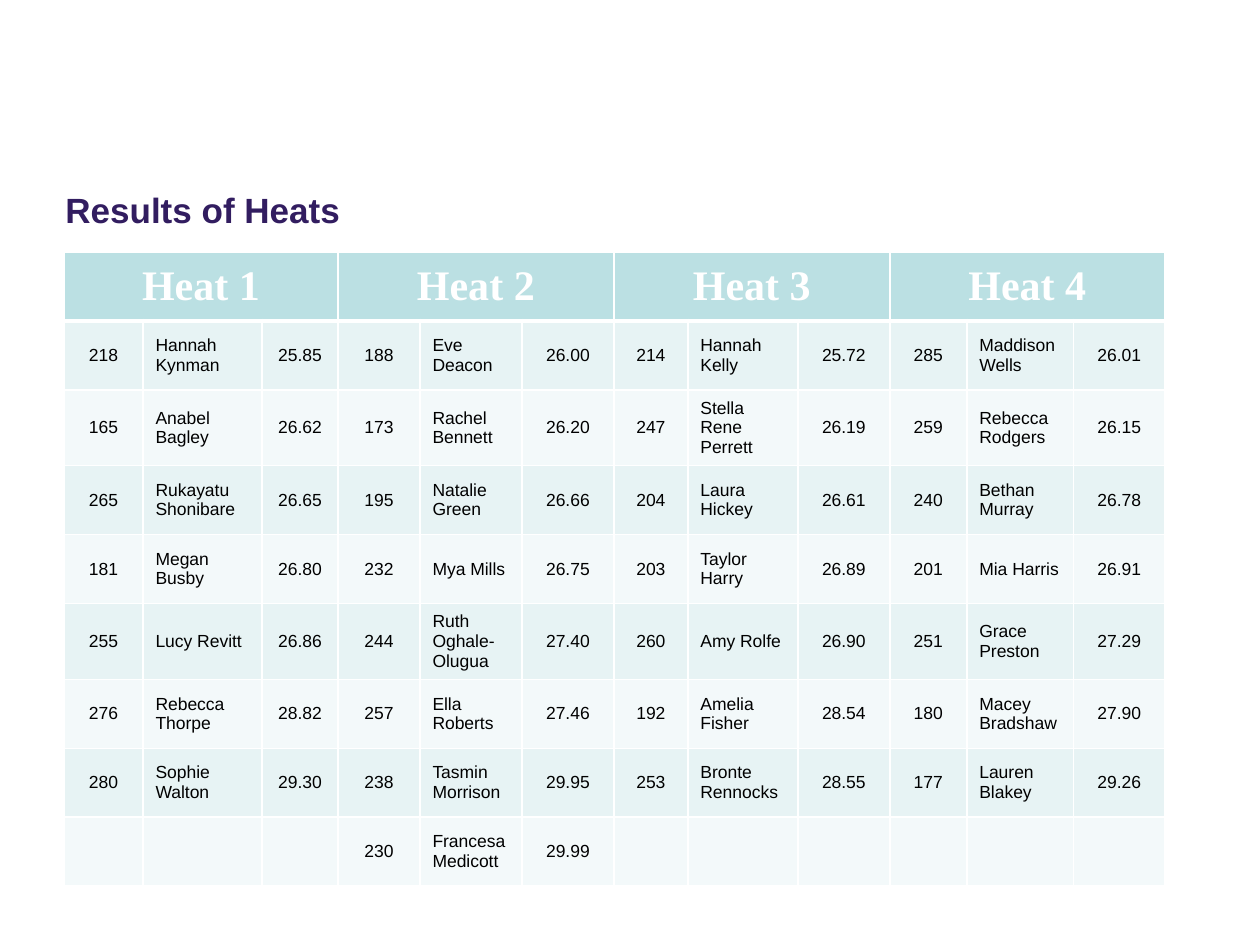
from lxml import etree
from pptx import Presentation
from pptx import util as u
from pptx.dml.color import RGBColor
from pptx.enum import text
from pptx.oxml import ns

COLORS = {
    "title": "321D60",
    "header": "BBE0E3",
    "odd": "E7F3F4",
    "even": "F3F9FA",
    "ink": "000000",
    "white": "FFFFFF",
}
HEATS = {
    "Heat 1": [
        ("218", "Hannah Kynman", "25.85"),
        ("165", "Anabel Bagley", "26.62"),
        ("265", "Rukayatu Shonibare", "26.65"),
        ("181", "Megan Busby", "26.80"),
        ("255", "Lucy Revitt", "26.86"),
        ("276", "Rebecca Thorpe", "28.82"),
        ("280", "Sophie Walton", "29.30"),
    ],
    "Heat 2": [
        ("188", "Eve Deacon", "26.00"),
        ("173", "Rachel Bennett", "26.20"),
        ("195", "Natalie Green", "26.66"),
        ("232", "Mya Mills", "26.75"),
        ("244", "Ruth Oghale-Olugua", "27.40"),
        ("257", "Ella Roberts", "27.46"),
        ("238", "Tasmin Morrison", "29.95"),
        ("230", "Francesa Medicott", "29.99"),
    ],
    "Heat 3": [
        ("214", "Hannah Kelly", "25.72"),
        ("247", "Stella Rene Perrett", "26.19"),
        ("204", "Laura Hickey", "26.61"),
        ("203", "Taylor Harry", "26.89"),
        ("260", "Amy Rolfe", "26.90"),
        ("192", "Amelia Fisher", "28.54"),
        ("253", "Bronte Rennocks", "28.55"),
    ],
    "Heat 4": [
        ("285", "Maddison Wells", "26.01"),
        ("259", "Rebecca Rodgers", "26.15"),
        ("240", "Bethan Murray", "26.78"),
        ("201", "Mia Harris", "26.91"),
        ("251", "Grace Preston", "27.29"),
        ("180", "Macey Bradshaw", "27.90"),
        ("177", "Lauren Blakey", "29.26"),
    ],
}
COLUMN_WIDTHS = [79, 119, 76, 82, 102, 92, 74, 110, 92, 77, 107, 91]
ROW_HEIGHT = 69
FIELDS = 3  # number, name, time


def px(n):
    return u.Emu(round(n * 914400 / 126))


class Deck:
    def __init__(self):
        self.prs = Presentation()
        self.prs.slide_width, self.prs.slide_height = px(1260), px(945)
        self.s = self.prs.slides.add_slide(self.prs.slide_layouts[6])

    def style(self, p, size, color, font="Arial", bold=False, center=False):
        p.alignment = text.PP_ALIGN.CENTER if center else text.PP_ALIGN.LEFT
        for r in p.runs:
            r.font.size, r.font.name, r.font.bold = u.Pt(size), font, bold
            r.font.color.rgb = RGBColor.from_string(COLORS[color])

    def title(self, words, x, y, w, h):
        tf = self.s.shapes.add_textbox(px(x), px(y), px(w), px(h)).text_frame
        tf.word_wrap = True
        tf.margin_top = px(10)
        tf.text = words
        self.style(tf.paragraphs[0], 20, "title", bold=True)

    def table(self, x, y, widths, rows):
        frame = self.s.shapes.add_table(
            rows, len(widths), px(x), px(y), px(sum(widths)), px(rows * ROW_HEIGHT))
        table = frame.table
        table.horz_banding = False
        for column, width in zip(table.columns, widths):
            column.width = px(width)
        for row in table.rows:
            row.height = px(ROW_HEIGHT)
        return table

    def cell(self, cell, fill, top=1, bottom=1):
        cell.vertical_anchor = text.MSO_ANCHOR.MIDDLE
        cell.fill.solid()
        cell.fill.fore_color.rgb = RGBColor.from_string(COLORS[fill])
        tc_pr = cell._tc.get_or_add_tcPr()
        sides = (("a:lnL", 1), ("a:lnR", 1), ("a:lnT", top), ("a:lnB", bottom))
        for i, (tag, width) in enumerate(sides):
            line = etree.Element(ns.qn(tag), w=str(int(u.Pt(width))))
            solid = etree.SubElement(line, ns.qn("a:solidFill"))
            etree.SubElement(solid, ns.qn("a:srgbClr"), val=COLORS["white"])
            tc_pr.insert(i, line)

    def label(self, cell, words, *args, **kwargs):
        cell.text_frame.text = words
        self.style(cell.text_frame.paragraphs[0], *args, **kwargs)


def main():
    deck = Deck()
    deck.title("Results of Heats", 53, 179, 840, 73)

    # Table grid: one heading row, then banded result rows
    rows = 1 + max(len(results) for results in HEATS.values())
    table = deck.table(64, 252, COLUMN_WIDTHS, rows)
    for row in range(rows):
        fill = "header" if row == 0 else "odd" if row % 2 else "even"
        for col in range(len(COLUMN_WIDTHS)):
            deck.cell(table.cell(row, col), fill,
                      top=3 if row == 1 else 1, bottom=3 if row == 0 else 1)

    # Heat headings and results
    for heat, (heading, results) in enumerate(HEATS.items()):
        first = heat * FIELDS
        head = table.cell(0, first)
        head.merge(table.cell(0, first + FIELDS - 1))
        deck.label(head, heading, 24, "white", "Times New Roman", bold=True, center=True)
        for row, result in enumerate(results, 1):
            for field, words in enumerate(result):
                deck.label(table.cell(row, first + field), words, 10, "ink",
                           center=field != 1)

    deck.prs.save("out.pptx")


if __name__ == "__main__":
    main()
